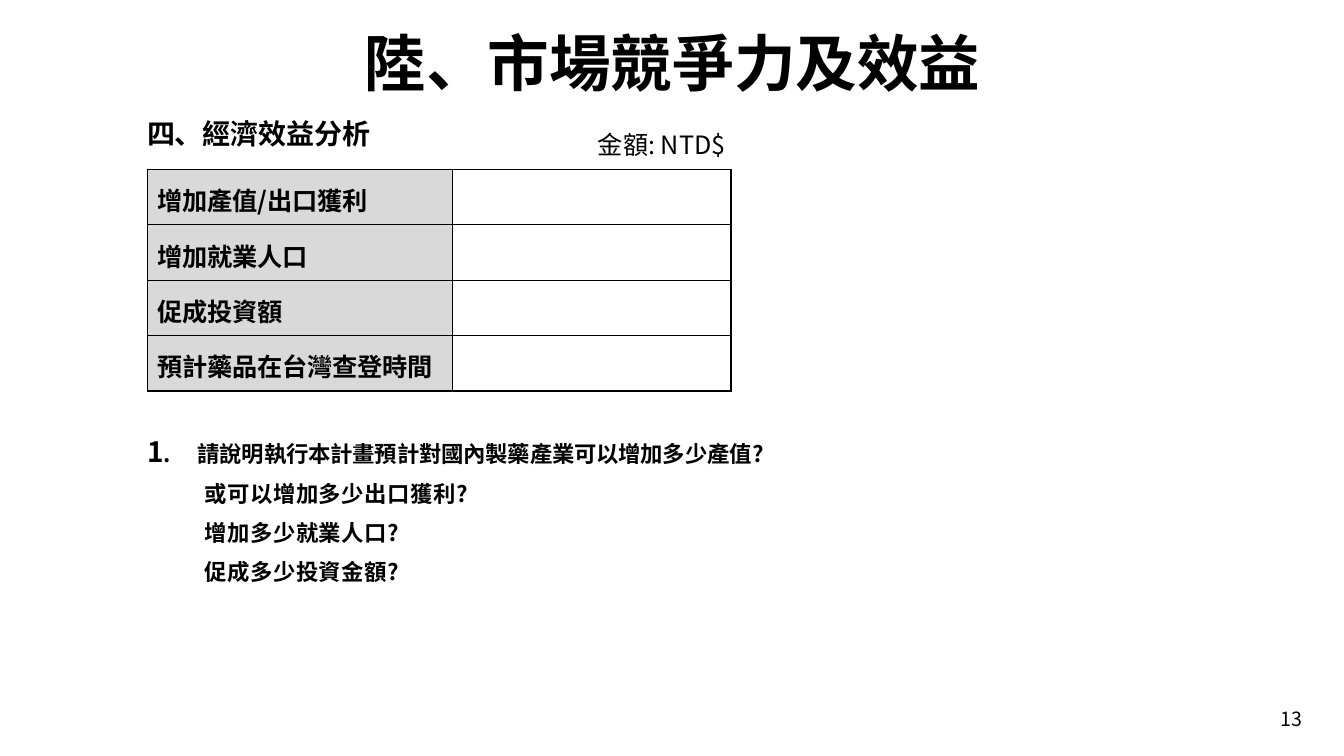
from dataclasses import dataclass

from lxml import etree
from pptx import Presentation, util as u
from pptx.dml.color import RGBColor
from pptx.enum import text as t
from pptx.oxml import ns


@dataclass(frozen=True)
class Theme:
    font: str = "Noto Sans CJK SC"
    ink: str = "000000"
    label_fill: str = "D9D9D9"
    title: int = 44
    heading: int = 20
    table: int = 18
    body: int = 16
    number: int = 14
    leading: float = 0.9
    border: float = 1


def child(parent, tag, **attrs):
    return etree.SubElement(parent, ns.qn(tag), attrs)


class Page:
    """Builds one slide; positions are percentages of the slide's size."""

    def __init__(self, prs, theme):
        self.prs, self.theme = prs, theme
        self.s = prs.slides.add_slide(prs.slide_layouts[1])

    def x(self, share):
        return round(self.prs.slide_width * share / 100)

    def y(self, share):
        return round(self.prs.slide_height * share / 100)

    def area(self, x, y, w, h):
        return self.x(x), self.y(y), self.x(w), self.y(h)

    def style(self, r, size, bold=False, tracking=0):
        r.font.size, r.font.bold = u.Pt(size), bold
        r.font.color.rgb = RGBColor.from_string(self.theme.ink)
        r.font.name = self.theme.font
        rpr = r.font._element
        rpr.set("spc", str(round(tracking * 100)))
        child(rpr, "a:ea", typeface=self.theme.font)

    def frame(self, sp, area, inset):
        """Place a shape and set its left and top insets in points."""
        sp.left, sp.top, sp.width, sp.height = self.area(*area)
        tf = sp.text_frame
        tf.word_wrap, tf.auto_size = True, t.MSO_AUTO_SIZE.NONE
        tf.vertical_anchor = t.MSO_ANCHOR.TOP
        tf.margin_left, tf.margin_top = map(u.Pt, inset)
        tf.margin_right = tf.margin_bottom = 0
        return tf

    def line(self, tf, text, size, bold=False, tracking=0):
        tf.text = text
        p = tf.paragraphs[0]
        p.line_spacing = self.theme.leading
        self.style(p.runs[0], size, bold, tracking)
        return p

    def title(self, text, area):
        tf = self.frame(self.s.shapes.title, area, (0, 1))
        p = self.line(tf, text, self.theme.title, True, -0.1)
        p.alignment = t.PP_ALIGN.CENTER

    def label(self, text, area, size, bold=False, tracking=0, inset=(0, 1)):
        sp = self.s.shapes.add_textbox(*self.area(*area))
        self.line(self.frame(sp, area, inset), text, size, bold, tracking)

    def questions(self, number, lines, area):
        """Fill the body with a numbered question and its indented follow-ups."""
        th = self.theme
        tf = self.frame(self.s.placeholders[1], area, (0, 13))
        for i, text in enumerate(lines):
            p = tf.paragraphs[0] if i == 0 else tf.add_paragraph()
            ppr = p._p.get_or_add_pPr()
            ppr.set("marL", str(u.Inches(0.57) if i else 0))
            ppr.set("indent", "0")
            child(ppr, "a:buNone")
            if i == 0:
                tabs = child(ppr, "a:tabLst")
                child(tabs, "a:tab", pos=str(u.Inches(0.5)), algn="l")
                r = p.add_run()
                r.text = number
                self.style(r, th.heading, True, -0.1)
                text = ".\t" + text
            p.line_spacing = th.leading
            p.space_before = u.Pt(10.6 if i else 0)
            r = p.add_run()
            r.text = text
            self.style(r, th.body, True, 0.4 if i else -0.1)

    def borders(self, cell):
        tcpr = cell._tc.get_or_add_tcPr()
        for side in ("a:lnL", "a:lnR", "a:lnT", "a:lnB"):
            ln = child(tcpr, side, w=str(u.Pt(self.theme.border)))
            child(child(ln, "a:solidFill"), "a:srgbClr", val=self.theme.ink)

    def form(self, labels, area, widths):
        """Add a table of shaded labels with an empty answer column."""
        th = self.theme
        table = self.s.shapes.add_table(
            len(labels), len(widths), *self.area(*area)).table
        table.first_row = table.horz_banding = False
        for column, width in zip(table.columns, widths):
            column.width = self.x(width)
        for row, text in enumerate(labels):
            name, answer = table.cell(row, 0), table.cell(row, 1)
            for cell in (name, answer):
                self.borders(cell)
                cell.fill.background()
            name.fill.solid()
            name.fill.fore_color.rgb = RGBColor.from_string(th.label_fill)
            name.margin_left, name.margin_top = u.Pt(7.2), u.Pt(8.6)
            name.margin_right = name.margin_bottom = 0
            p = self.line(name.text_frame, text, th.table, True, -0.1)
            p.line_spacing = 1.0


def main():
    prs = Presentation()
    prs.slide_width, prs.slide_height = u.Inches(13.33), u.Inches(7.5)
    th = Theme()
    page = Page(prs, th)
    left = 10.95

    page.label("金額: NTD$", (43.74, 16.93, 12.3, 5.33), th.table,
               inset=(7.2, 3.6))
    page.title("陸、市場競爭力及效益", (22.36, 4.27, 55.36, 10.13))
    page.label("13", (95.27, 93.47, 2.25, 3.87), th.number,
               tracking=-0.2, inset=(0, 2))
    page.questions("1", (
        "請說明執行本計畫預計對國內製藥產業可以增加多少產值?",
        "或可以增加多少出口獲利?",
        "增加多少就業人口?",
        "促成多少投資金額?",
    ), (left, 55.6, 47.41, 24.4))
    page.label("四、經濟效益分析", (left, 15.73, 19.05, 4.67), th.heading,
               bold=True, tracking=-0.1)
    page.form(("增加產值/出口獲利", "增加就業人口", "促成投資額",
               "預計藥品在台灣查登時間"),
              (left, 22.4, 43.44, 29.33), (22.73, 20.71))
    prs.save("out.pptx")


if __name__ == "__main__":
    main()
